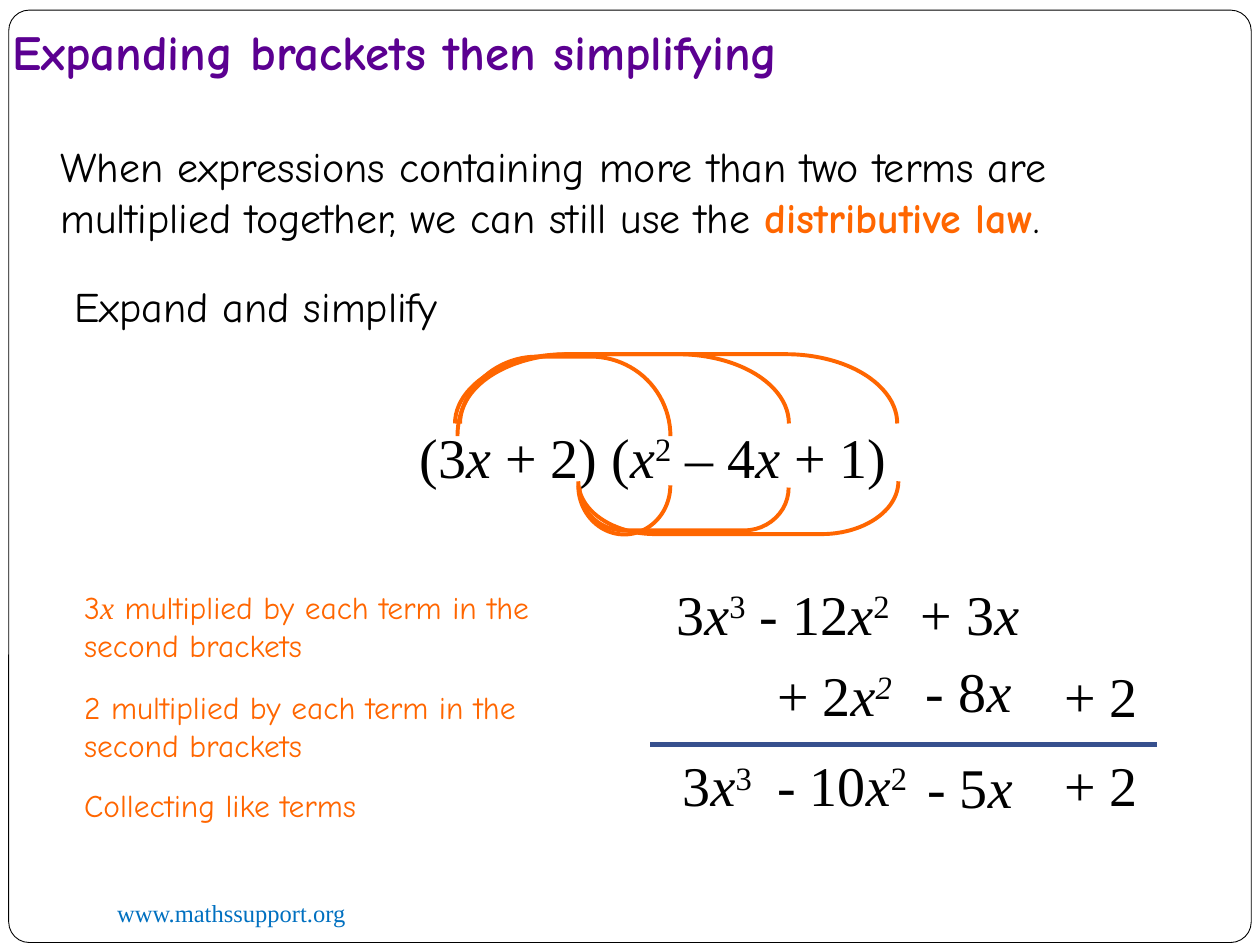
import pptx
import pptx.util
import pptx.dml.color
import pptx.enum.shapes
import pptx.enum.text
import pptx.oxml.ns
from dataclasses import dataclass
from lxml import etree

Pt = pptx.util.Pt
SHAPE = pptx.enum.shapes.MSO_SHAPE
ANCHOR = pptx.enum.text.MSO_ANCHOR


@dataclass(frozen=True)
class Theme:
    ink: str = "000000"
    paper: str = "FFFFFF"
    purple: str = "5B0091"
    orange: str = "FF6600"
    link: str = "0070C0"
    rule: str = "37508E"
    body_font: str = "Comic Neue"
    math_font: str = "Times New Roman"
    title: int = 28
    body: int = 24
    note: int = 18
    math: int = 32
    footer: int = 14


def rgb(value):
    return pptx.dml.color.RGBColor.from_string(value)


class Board:
    def __init__(self, slide, theme):
        self.s, self.theme = slide, theme

    def text(self, x, y, w, h, runs, size, color=None, font=None, wrap=True):
        """Each run is (text, overrides)."""
        tf = self.s.shapes.add_textbox(Pt(x), Pt(y), Pt(w), Pt(h)).text_frame
        tf.word_wrap = wrap
        p = tf.paragraphs[0]
        for words, style in runs:
            r = p.add_run()
            r.text = words
            r.font.size = Pt(size)
            r.font.name = style.get("font", font or self.theme.body_font)
            r.font.bold = style.get("bold", False)
            r.font.italic = style.get("italic", False)
            r.font.color.rgb = rgb(style.get("color", color or self.theme.ink))
            if style.get("sup"):
                r.font._element.set("baseline", "30000")
        return tf

    def math(self, x, y, w, *runs):
        self.text(x, y, w, 46, runs, self.theme.math,
                  font=self.theme.math_font, wrap=False)

    def frame(self, x, y, w, h, radius):
        sp = self.s.shapes.add_shape(SHAPE.ROUNDED_RECTANGLE, Pt(x), Pt(y), Pt(w), Pt(h))
        sp.shadow.inherit = False
        sp.adjustments[0] = radius
        sp.fill.solid()
        sp.fill.fore_color.rgb = rgb(self.theme.paper)
        sp.line.color.rgb = rgb(self.theme.ink)
        sp.line.width = Pt(0.5)

    def arc(self, x, y, w, h, curve, below=False):
        """A bracket turned on its side, filling the area x, y, w, h."""
        left, top = x + (w - h) / 2, y + (h - w) / 2
        sp = self.s.shapes.add_shape(SHAPE.LEFT_BRACKET, Pt(left), Pt(top), Pt(h), Pt(w))
        sp.shadow.inherit = False
        sp.rotation = 90
        if below:
            sp._element.spPr.xfrm.set("flipH", "1")
        sp.adjustments[0] = curve
        sp.fill.background()
        sp.line.color.rgb = rgb(self.theme.orange)
        sp.line.width = Pt(2.25)

    def rule(self, x1, x2, y):
        line = self.s.shapes.add_connector(
            pptx.enum.shapes.MSO_CONNECTOR.STRAIGHT, Pt(x1), Pt(y), Pt(x2), Pt(y))
        line.line.color.rgb = rgb(self.theme.rule)
        line.line.width = Pt(2.75)
        etree.SubElement(line._element.spPr, pptx.oxml.ns.qn("a:effectLst"))


def plain(words):
    return words, {}


def power(digit, italic=False):
    return digit, {"sup": True, "italic": italic}


def main():
    prs = pptx.Presentation()
    prs.slide_width, prs.slide_height = Pt(720), Pt(540)
    t = Theme()
    b = Board(prs.slides.add_slide(prs.slide_layouts[6]), t)
    x = ("x", {"italic": True})

    # Page frame and footer
    b.frame(5, 5.8, 710, 532.8, 0.022)
    b.text(59.8, 509.8, 234, 24.5, [plain("www.mathssupport.org")],
           t.footer, t.link, t.math_font)

    # Title and introduction
    tf = b.text(0, 11.5, 612, 41.8,
                [("Expanding brackets then simplifying", {"bold": True})],
                t.title, t.purple)
    tf.vertical_anchor = ANCHOR.BOTTOM
    tf.margin_bottom = Pt(7.2)
    b.text(27.4, 77, 667.4, 65.5, [
        plain("When expressions containing more than two terms are "
              "multiplied together, we can still use the "),
        ("distributive law", {"bold": True, "color": t.orange}),
        plain(".")], t.body)
    b.text(35.3, 157, 239, 36, [plain("Expand and simplify")], t.body, wrap=False)

    # Expression, with arcs joining the terms to be multiplied
    b.math(232.6, 237.6, 317.5, plain("(3"), x, plain(" + 2) ("), x, power("2"),
           plain(" – 4"), x, plain(" + 1)"))
    for left, top, w, h, curve in ((261.4, 203.8, 121.7, 45.4, 1),
                                   (262.9, 202.4, 187.9, 39.6, 1.608),
                                   (260, 202.4, 252.7, 39.6, 1.608)):
        b.arc(left, top, w, h, curve)
    for left, top, w, h, curve in ((330.5, 277.3, 52.6, 28.1, 1),
                                   (331.2, 278.6, 119.5, 24.5, 1.042),
                                   (330.5, 275, 182.9, 30.2, 1.458)):
        b.arc(left, top, w, h, curve, below=True)

    # Explanation of each working line
    second = " multiplied by each term in the second brackets"
    for y, h, runs in (
            (332.6, 51, [plain("3"), ("x", {"italic": True, "font": t.math_font}),
                         plain(second)]),
            (389.5, 51, [plain("2" + second)]),
            (445.7, 29, [plain("Collecting like terms")])):
        b.text(41, y, 313.9, h, runs, t.note, t.orange)

    # Products of 3x
    b.math(379.4, 327.6, 59, plain("3"), x, power("3"))
    b.math(427, 327.6, 97.2, plain("- 12"), x, power("2"))
    b.math(519.1, 327.6, 74.2, plain("+ 3"), x)

    # Products of 2
    b.math(437, 373.7, 84.2, plain("+ 2"), x, power("2", italic=True))
    b.math(522, 371.5, 72, plain("- 8"), x)
    b.math(601.2, 374.4, 59.8, plain("+ 2"))

    # Sum of like terms
    b.rule(371.5, 661, 425.5)
    b.math(383, 425.5, 59, plain("3"), x, power("3"))
    b.math(437, 425.5, 97.2, plain("- 10"), x, power("2"))
    b.math(522.7, 426.2, 72, plain("- 5"), x)
    b.math(601.2, 425.5, 59.8, plain("+ 2"))

    prs.save("out.pptx")


if __name__ == "__main__":
    main()
